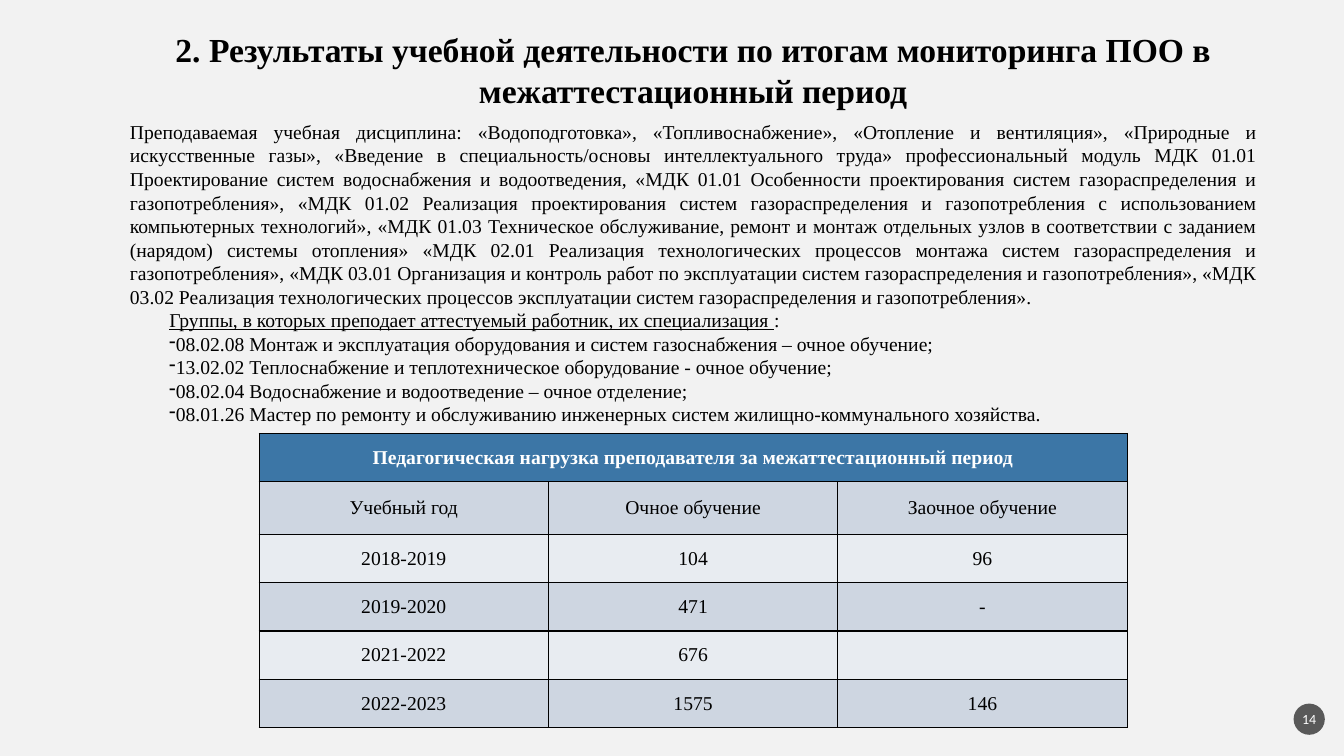
from lxml import etree
from pptx import Presentation
from pptx.dml.color import RGBColor
from pptx.enum.shapes import MSO_SHAPE
from pptx.enum.text import MSO_ANCHOR, PP_ALIGN
from pptx.oxml.ns import qn
from pptx.util import Inches, Pt

CENTER, JUSTIFY = PP_ALIGN.CENTER, PP_ALIGN.JUSTIFY
MIDDLE = MSO_ANCHOR.MIDDLE
OVAL = MSO_SHAPE.OVAL
SERIF = "Times New Roman"
BLACK, WHITE = "000000", "FFFFFF"
HEADER_BLUE, BAND_DARK, BAND_LIGHT = "3C76A6", "CED6E1", "E8ECF1"

TITLE = "2. Результаты учебной деятельности по итогам мониторинга ПОО в межаттестационный период"
DISCIPLINES = [
    "Преподаваемая учебная дисциплина: «Водоподготовка»",
    "«Топливоснабжение»",
    "«Отопление и вентиляция»",
    "«Природные и искусственные газы»",
    "«Введение в специальность/основы интеллектуального труда» профессиональный модуль "
    "МДК 01.01 Проектирование систем водоснабжения и водоотведения",
    "«МДК 01.01 Особенности проектирования систем газораспределения и газопотребления»",
    "«МДК 01.02 Реализация проектирования систем газораспределения и газопотребления "
    "с использованием компьютерных технологий»",
    "«МДК 01.03 Техническое обслуживание, ремонт и монтаж отдельных узлов "
    "в соответствии с заданием (нарядом) системы отопления» "
    "«МДК 02.01 Реализация технологических процессов монтажа систем газораспределения "
    "и газопотребления»",
    "«МДК 03.01 Организация и контроль работ по эксплуатации систем "
    "газораспределения и газопотребления»",
    "«МДК 03.02 Реализация технологических процессов "
    "эксплуатации систем газораспределения и газопотребления».",
]
GROUPS_HEADING = "Группы, в которых преподает аттестуемый работник, их специализация "
GROUPS = [
    "08.02.08 Монтаж и эксплуатация оборудования и систем газоснабжения – очное обучение;",
    "13.02.02 Теплоснабжение и теплотехническое оборудование - очное обучение;",
    "08.02.04 Водоснабжение и водоотведение – очное отделение;",
    "08.01.26 Мастер по ремонту и обслуживанию инженерных систем жилищно-коммунального хозяйства.",
]
WORKLOAD = [
    ["Педагогическая нагрузка преподавателя за межаттестационный период", "", ""],
    ["Учебный год", "Очное обучение", "Заочное обучение"],
    ["2018-2019", "104", "96"],
    ["2019-2020", "471", "-"],
    ["2021-2022", "676", ""],
    ["2022-2023", "1575", "146"],
]


def color(value):
    return RGBColor.from_string(value)


def style(paragraph, size, alignment, text_color=BLACK, bold=False, font=SERIF):
    paragraph.alignment = alignment
    paragraph.font.name = font
    paragraph.font.size = Pt(size)
    paragraph.font.bold = bold
    paragraph.font.color.rgb = color(text_color)


presentation = Presentation()
presentation.slide_width = Inches(13.33)
presentation.slide_height = Inches(7.5)
slide = presentation.slides.add_slide(presentation.slide_layouts[6])
slide.background.fill.solid()
slide.background.fill.fore_color.rgb = color("F2F2F2")

# Slide number
badge = slide.shapes.add_shape(OVAL, Inches(12.83), Inches(6.98), Inches(0.31), Inches(0.31))
badge.shadow.inherit = False
badge.fill.solid()
badge.fill.fore_color.rgb = color("595959")
badge.line.fill.background()
frame = badge.text_frame
frame.margin_left = frame.margin_right = frame.margin_top = frame.margin_bottom = 0
frame.vertical_anchor = MIDDLE
frame.word_wrap = False
frame.text = "14"
style(frame.paragraphs[0], 10, CENTER, WHITE, font="Calibri")

# Title
title = slide.shapes.add_textbox(Inches(1.28), Inches(0.24), Inches(11.19), Inches(0.91))
title.text_frame.word_wrap = True
title.text_frame.text = TITLE
style(title.text_frame.paragraphs[0], 24, CENTER, bold=True)

# Disciplines and groups
body = slide.shapes.add_textbox(Inches(1.19), Inches(1.14), Inches(11.38), Inches(3.16))
frame = body.text_frame
frame.word_wrap = True
frame.text = ", ".join(DISCIPLINES)
heading = frame.add_paragraph()
run = heading.add_run()
run.text = GROUPS_HEADING
run.font.underline = True
heading.add_run().text = ":"
for group in GROUPS:
    paragraph = frame.add_paragraph()
    paragraph.text = group
    bullet = etree.SubElement(paragraph._p.get_or_add_pPr(), qn("a:buChar"))
    bullet.set("char", "-")
for paragraph in frame.paragraphs:
    style(paragraph, 14, JUSTIFY)
for paragraph in frame.paragraphs[1:]:
    properties = paragraph._p.get_or_add_pPr()
    properties.set("marL", "0")
    properties.set("indent", str(Inches(0.39)))

# Workload table
table = slide.shapes.add_table(
    len(WORKLOAD), 3, Inches(2.57), Inches(4.3), Inches(8.61), Inches(2.94)
).table
for column in table.columns:
    column.width = Inches(2.87)
for row_index, values in enumerate(WORKLOAD):
    is_header = row_index == 0
    band = HEADER_BLUE if is_header else BAND_DARK if row_index % 2 else BAND_LIGHT
    table.rows[row_index].height = Inches(0.52 if row_index == 1 else 0.48)
    for column_index, value in enumerate(values):
        cell = table.cell(row_index, column_index)
        cell.text = value
        cell.vertical_anchor = MIDDLE
        style(cell.text_frame.paragraphs[0], 14, CENTER, WHITE if is_header else BLACK, is_header)
        # Borders come before the fill in the cell properties
        properties = cell._tc.get_or_add_tcPr()
        for side in ("a:lnL", "a:lnR", "a:lnT", "a:lnB"):
            border = etree.SubElement(properties, qn(side), w=str(Pt(1)))
            line_fill = etree.SubElement(border, qn("a:solidFill"))
            etree.SubElement(line_fill, qn("a:srgbClr"), val=BLACK)
        cell.fill.solid()
        cell.fill.fore_color.rgb = color(band)
table.cell(0, 0).merge(table.cell(0, 2))

presentation.save("out.pptx")
